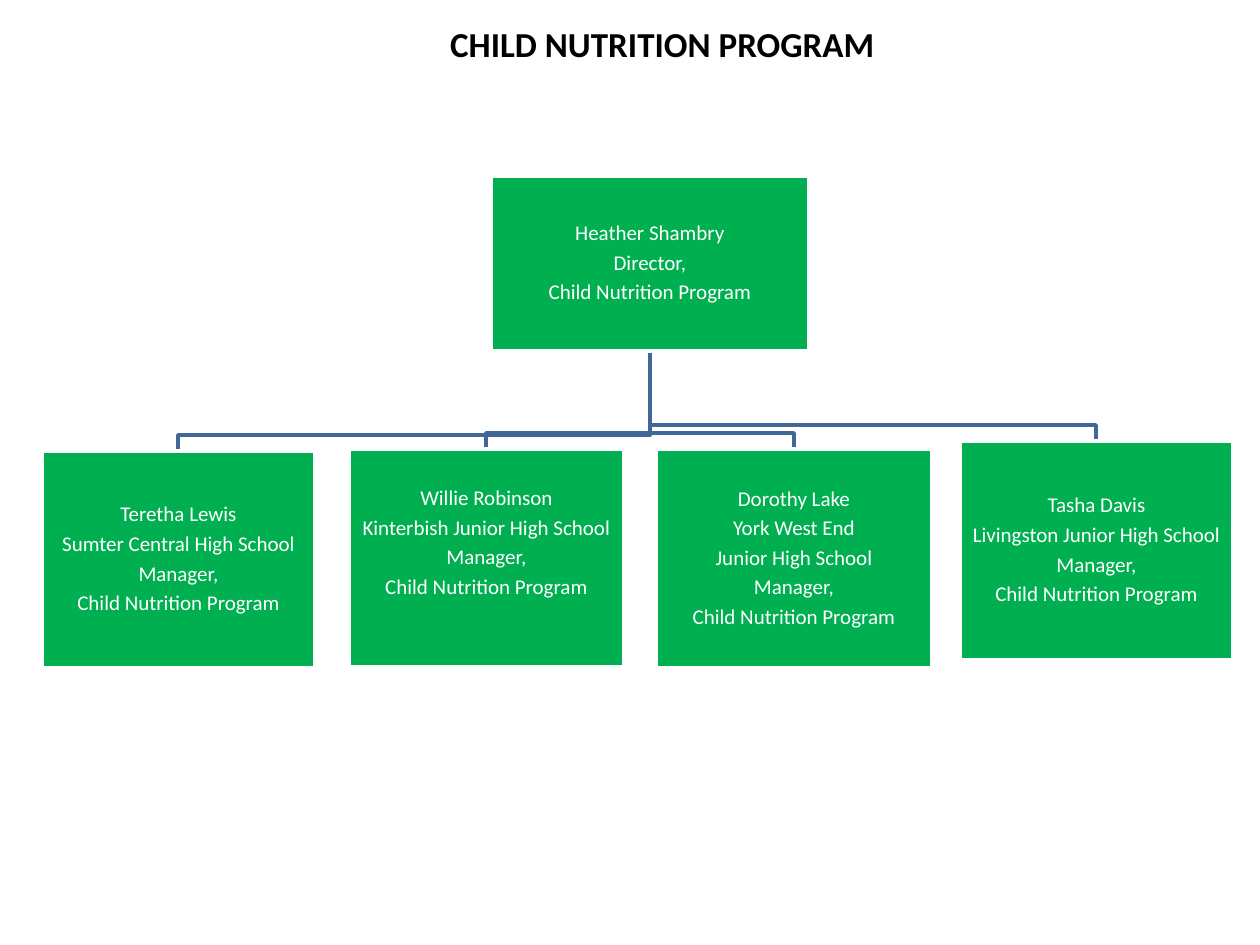
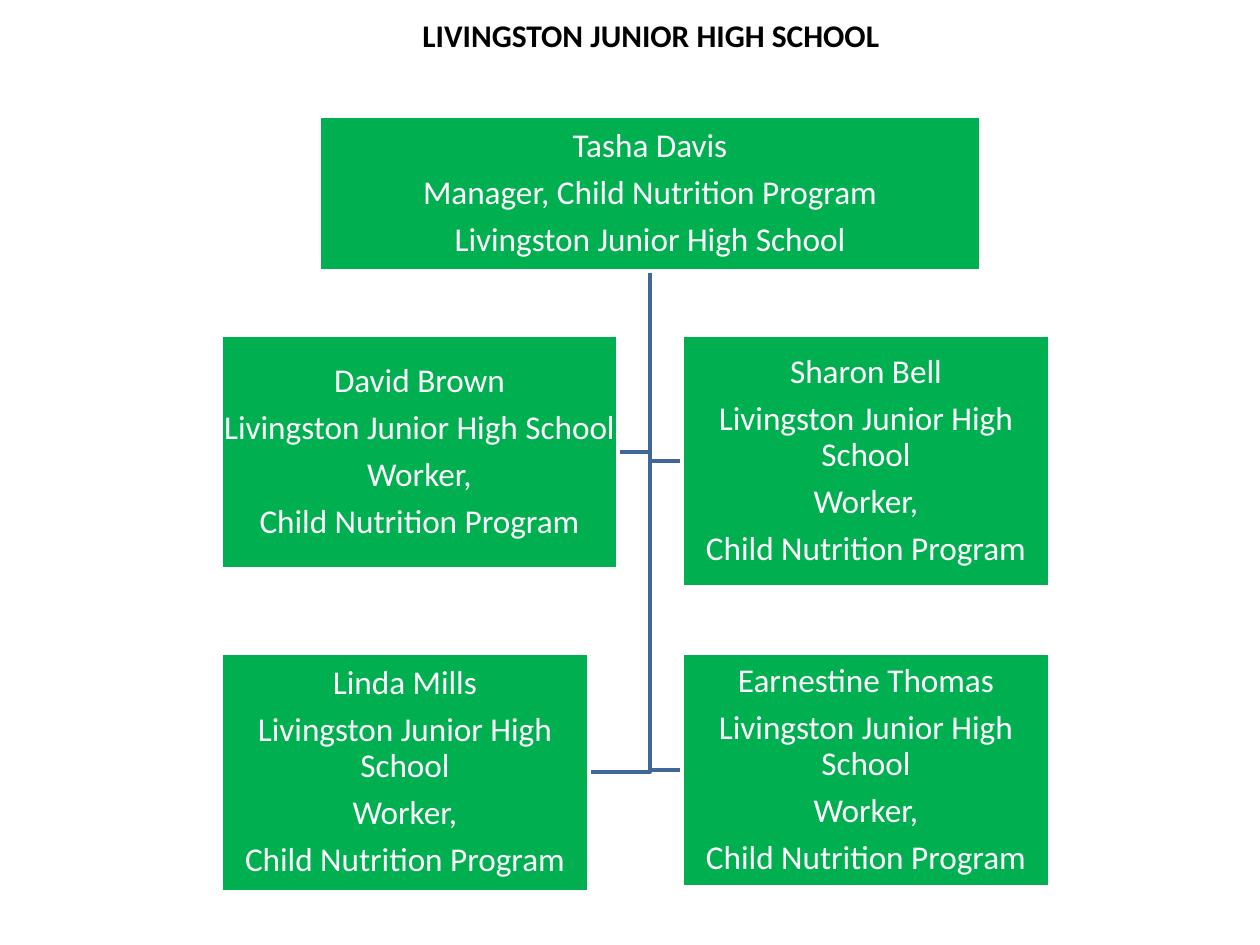
from pptx import Presentation
from pptx import util as u
from pptx.dml.color import RGBColor
from pptx.enum import shapes, text

PX = 914400 / 126  # EMU in one pixel
COLOURS = {"box": "00B050", "edge": "FFFFFF", "link": "3F6797",
           "label": "FFFFFF", "title": "000000"}
BEND = 16  # px between a horizontal link and the box below it

SCHOOL = "Livingston Junior High School"
PROGRAM = "Child Nutrition Program"
WORKER = [SCHOOL, "Worker,", PROGRAM]
MANAGER = ["Manager,", PROGRAM]

# Each box is (left, top, width, height, lines, bottom inset), the head first
CHARTS = [
    {"title": "CHILD NUTRITION PROGRAM", "title_at": (336, 16, 653, 55),
     "title_size": 20, "align": text.PP_ALIGN.CENTER, "wrap": True,
     "label_size": 12, "links": "above",
     "boxes": [
         (491, 176, 318, 175, ["Heather Shambry", "Director,", PROGRAM], 1),
         (42, 451, 273, 217, ["Teretha Lewis", "Sumter Central High School"] + MANAGER, 1),
         (349, 449, 275, 218, ["Willie Robinson", "Kinterbish Junior High School"] + MANAGER, 31),
         (656, 449, 276, 219, ["Dorothy Lake", "York West End", "Junior High School"] + MANAGER, 1),
         (960, 441, 273, 219, ["Tasha Davis", SCHOOL] + MANAGER, 1)]},
    {"title": "LIVINGSTON JUNIOR HIGH SCHOOL", "title_at": (410, 10, 486, 89),
     "title_size": 18, "align": text.PP_ALIGN.LEFT, "wrap": False,
     "label_size": 19, "links": "beside",
     "boxes": [
         (319, 116, 662, 155, ["Tasha Davis", "Manager, " + PROGRAM, SCHOOL], 1),
         (221, 335, 397, 234, ["David Brown"] + WORKER, 1),
         (682, 335, 368, 252, ["Sharon Bell"] + WORKER, 1),
         (221, 653, 368, 239, ["Linda Mills"] + WORKER, 1),
         (682, 653, 368, 234, ["Earnestine Thomas"] + WORKER, 1)]},
]


def px(*lengths):
    return [u.Emu(round(length * PX)) for length in lengths]


def write(frame, lines, size, colour, bold=False, align=text.PP_ALIGN.CENTER,
          line_spacing=None, space_after=None):
    for number, line in enumerate(lines):
        paragraph = frame.add_paragraph() if number else frame.paragraphs[0]
        paragraph.alignment = align
        paragraph.line_spacing = line_spacing
        paragraph.space_after = space_after
        run = paragraph.add_run()
        run.text = line
        run.font.name = "Calibri"
        run.font.size = u.Pt(size)
        run.font.bold = bold
        run.font.color.rgb = RGBColor.from_string(COLOURS[colour])


presentation = Presentation()
presentation.slide_width, presentation.slide_height = px(1260, 945)

for chart in CHARTS:
    slide = presentation.slides.add_slide(presentation.slide_layouts[6])
    head_left, head_top, head_width, head_height = chart["boxes"][0][:4]
    trunk, start = head_left + head_width // 2, head_top + head_height

    # Links lie behind the boxes
    for left, top, width, height, *_ in chart["boxes"][1:]:
        if chart["links"] == "above":
            centre = left + width // 2
            points = [(trunk, top - BEND), (centre, top - BEND), (centre, top)]
        else:
            middle = top + height // 2
            side = left if left > trunk else left + width
            points = [(trunk, middle), (side, middle)]
        builder = slide.shapes.build_freeform(trunk, start, scale=PX)
        builder.add_line_segments(points, close=False)
        link = builder.convert_to_shape()
        link.shadow.inherit = False
        link.fill.background()
        link.line.color.rgb = RGBColor.from_string(COLOURS["link"])
        link.line.width = u.Pt(2)

    for left, top, width, height, lines, bottom_inset in chart["boxes"]:
        box = slide.shapes.add_shape(shapes.MSO_SHAPE.RECTANGLE, *px(left, top, width, height))
        box.shadow.inherit = False
        box.fill.solid()
        box.fill.fore_color.rgb = RGBColor.from_string(COLOURS["box"])
        box.line.color.rgb = RGBColor.from_string(COLOURS["edge"])
        box.line.width = u.Pt(2)
        frame = box.text_frame
        frame.word_wrap = True
        frame.vertical_anchor = text.MSO_ANCHOR.MIDDLE
        frame.margin_left = frame.margin_right = frame.margin_top = px(1)[0]
        frame.margin_bottom = px(bottom_inset)[0]
        size = chart["label_size"]
        write(frame, lines, size, "label", line_spacing=0.9, space_after=u.Pt(0.33 * size))

    title = slide.shapes.add_textbox(*px(*chart["title_at"]))
    title.text_frame.word_wrap = chart["wrap"]
    write(title.text_frame, [chart["title"]], chart["title_size"], "title",
          bold=True, align=chart["align"])

presentation.save("out.pptx")
